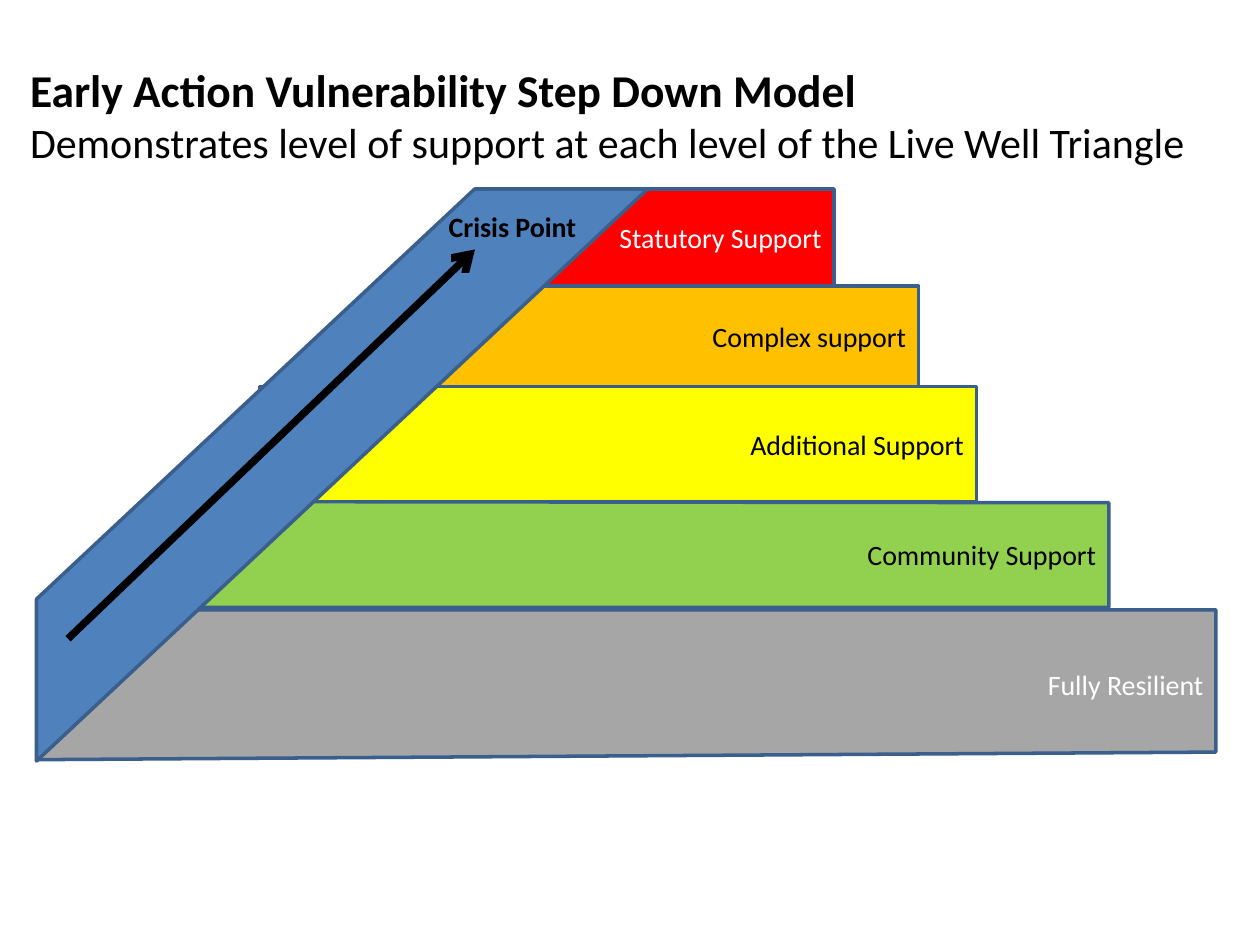
from lxml import etree
from pptx import Presentation
from pptx.dml.color import RGBColor
from pptx.enum.shapes import MSO_CONNECTOR, MSO_SHAPE
from pptx.enum.text import MSO_ANCHOR, MSO_AUTO_SIZE, PP_ALIGN
from pptx.oxml.ns import qn
from pptx.util import Inches, Pt

RECT, STRIPE = MSO_SHAPE.RECTANGLE, MSO_SHAPE.DIAGONAL_STRIPE
STRAIGHT = MSO_CONNECTOR.STRAIGHT
MIDDLE, RIGHT = MSO_ANCHOR.MIDDLE, PP_ALIGN.RIGHT
FIT = MSO_AUTO_SIZE.SHAPE_TO_FIT_TEXT
FONT = "Calibri"
COLORS = {
    "grey": "A6A6A6", "green": "92D050", "yellow": "FFFF00",
    "orange": "FFC000", "red": "FF0000", "blue": "4F81BD",
    "edge": "3A5F8C", "black": "000000", "white": "FFFFFF",
}
# Label, fill, text colour, corners clockwise from top left (% of the model)
STEPS = [
    ("Fully Resilient", "grey", "white",
     [(3.53, 73.57), (100, 73.57), (100, 98.46), (0, 99.78)]),
    ("Community Support", "green", "black",
     [(9.29, 54.63), (90.92, 54.85), (90.92, 73.13), (7.37, 73.13)]),
    ("Additional Support", "yellow", "black",
     [(18.91, 34.58), (79.7, 34.58), (79.7, 54.63), (18.91, 54.63)]),
    ("Complex support", "orange", "black",
     [(28.63, 16.96), (74.79, 16.96), (74.79, 34.58), (28.63, 34.58)]),
    ("Statutory Support", "red", "white",
     [(40.28, 0), (67.63, 0), (67.63, 16.96), (40.28, 16.96)]),
]


def tint(name):
    return RGBColor.from_string(COLORS[name])


def point(box, x, y):
    """Turn percentages of a box into slide coordinates."""
    left, top, width, height = box
    return round(left + width * x / 100), round(top + height * y / 100)


def area(box, x, y, width, height):
    """Return a part of a box, given in percentages."""
    left, top = point(box, x, y)
    right, base = point(box, x + width, y + height)
    return left, top, right - left, base - top


def paint(shape, fill):
    shape.shadow.inherit = False
    shape.fill.solid()
    shape.fill.fore_color.rgb = tint(fill)
    shape.line.color.rgb = tint("edge")
    shape.line.width = Pt(2)


def style(para, size, color="black", bold=False):
    for run in para.runs:
        run.font.name = FONT
        run.font.size = Pt(size)
        run.font.bold = bold
        run.font.color.rgb = tint(color)


def add_title(slide, box):
    frame = slide.shapes.add_textbox(*box).text_frame
    frame.word_wrap = True
    frame.auto_size = FIT
    head = frame.paragraphs[0]
    head.text = "Early Action Vulnerability Step Down Model"
    style(head, 26, bold=True)
    sub = frame.add_paragraph()
    sub.text = ("Demonstrates level of support at each level "
                "of the Live Well Triangle")
    style(sub, 24)


def add_step(slide, box, label, fill, ink, corners):
    """Draw one step: a rectangle where its corners are square."""
    (x1, y1), (x2, y2), (x3, y3), (x4, y4) = corners
    if x1 == x4 and x2 == x3 and y1 == y2 and y3 == y4:
        shape = slide.shapes.add_shape(
            RECT, *area(box, x1, y1, x2 - x1, y3 - y1))
    else:
        first, *rest = [point(box, x, y) for x, y in corners]
        path = slide.shapes.build_freeform(*first)
        path.add_line_segments(rest, close=True)
        shape = path.convert_to_shape()
    paint(shape, fill)
    frame = shape.text_frame
    frame.word_wrap = True
    frame.vertical_anchor = MIDDLE
    para = frame.paragraphs[0]
    para.text = label
    para.alignment = RIGHT
    style(para, 16, ink)


def add_crisis(slide, box):
    """Draw the diagonal band with its label and rising arrow."""
    band = slide.shapes.add_shape(STRIPE, *area(box, 0, 0, 51.82, 100))
    band.adjustments[0] = 0.717
    paint(band, "blue")

    note = slide.shapes.add_textbox(*area(box, 31.84, 4.19, 16.56, 6.39))
    frame = note.text_frame
    frame.word_wrap = True
    frame.margin_left = Inches(0.29)
    frame.margin_top = frame.margin_right = frame.margin_bottom = 0
    para = frame.paragraphs[0]
    para.text = "Crisis Point"
    para.line_spacing = 0.9
    para.space_after = Pt(6.7)
    style(para, 16, bold=True)

    arrow = slide.shapes.add_connector(
        STRAIGHT, *point(box, 2.67, 78.63), *point(box, 37.18, 10.57))
    arrow.line.color.rgb = tint("black")
    arrow.line.width = Pt(4.25)
    props = arrow.element.spPr
    etree.SubElement(props.find(qn("a:ln")), qn("a:tailEnd"), type="arrow")
    etree.SubElement(props, qn("a:effectLst"))


def add_model(slide, box):
    for step in STEPS:
        add_step(slide, box, *step)
    add_crisis(slide, box)


def main():
    deck = Presentation()
    deck.slide_width, deck.slide_height = Inches(10), Inches(7.5)
    slide = deck.slides.add_slide(deck.slide_layouts[6])
    page = (0, 0, deck.slide_width, deck.slide_height)
    add_model(slide, area(page, 2.9, 20, 93.6, 60.53))
    add_title(slide, area(page, 1.4, 5.87, 93.7, 12.53))
    deck.save("out.pptx")


if __name__ == "__main__":
    main()
